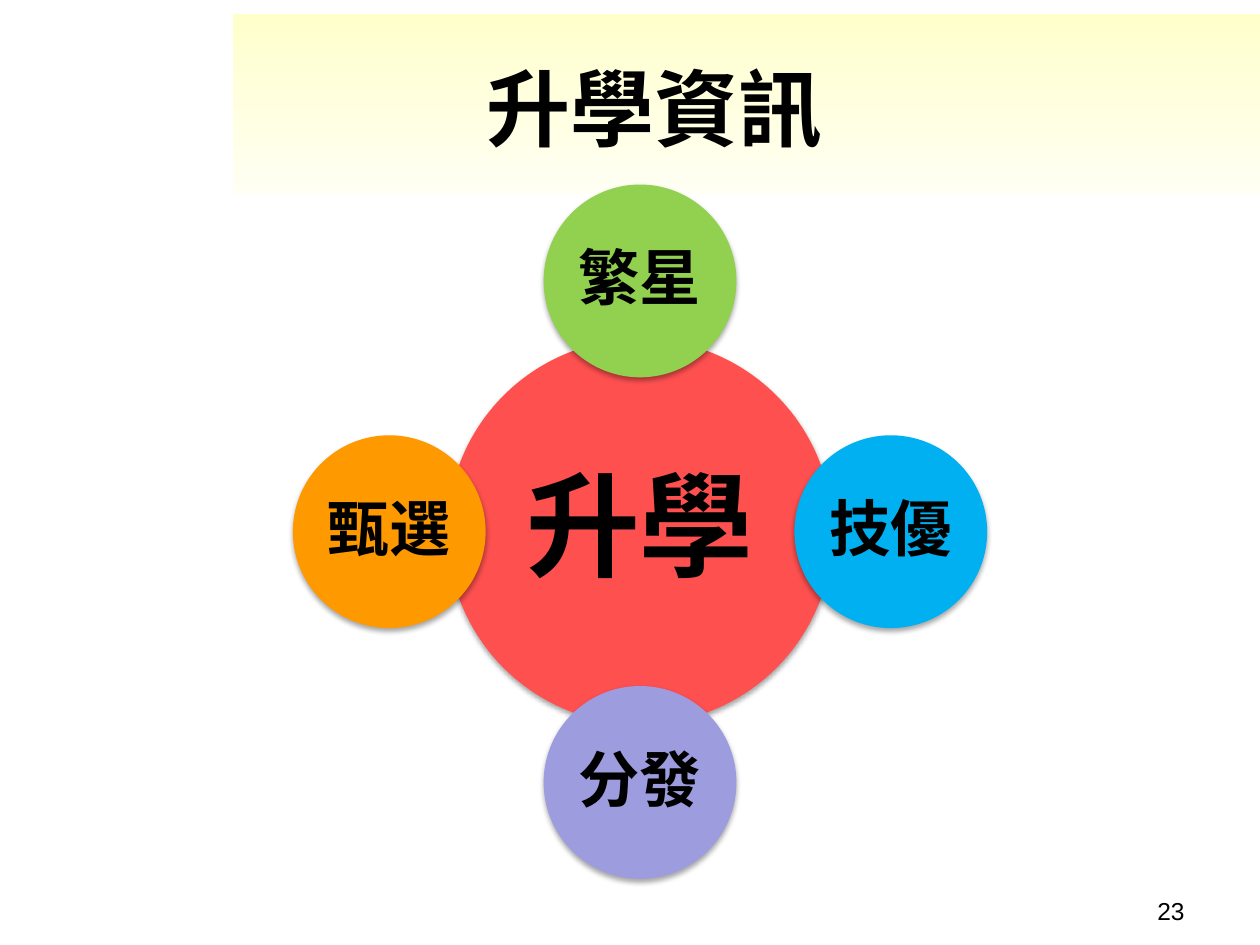
import pptx
import pptx.util
import pptx.dml.color
import pptx.enum.shapes
import pptx.enum.text
import pptx.oxml
import pptx.oxml.ns
from lxml import etree

Inches = pptx.util.Inches
Pt = pptx.util.Pt
Align = pptx.enum.text.PP_ALIGN
Anchor = pptx.enum.text.MSO_ANCHOR
Shape = pptx.enum.shapes.MSO_SHAPE
qn = pptx.oxml.ns.qn


def color(text):
    return pptx.dml.color.RGBColor.from_string(text)


def add(parent, tag, **attrs):
    return etree.SubElement(parent, qn(tag), attrs)


class Deck:
    head = "Noto Sans CJK SC"
    body = "Arial"
    ink = "000000"

    def __init__(self):
        self.file = pptx.Presentation()
        self.file.slide_width = Inches(10)
        self.file.slide_height = Inches(7.5)
        self.slide = self.file.slides.add_slide(self.file.slide_layouts[5])

    def label(self, shape, text, size, font, align, bold=False):
        frame = shape.text_frame
        frame.word_wrap = True
        frame.text = text
        para = frame.paragraphs[0]
        para.alignment = align
        run = para.runs[0]
        run.font.size = Pt(size)
        run.font.bold = bold
        run.font.name = font
        run.font.color.rgb = color(self.ink)
        add(run._r.get_or_add_rPr(), "a:ea", typeface=font)
        return para

    def banner(self, left, top, width, height, start, end):
        box = self.slide.shapes.add_shape(
            Shape.RECTANGLE, Inches(left), Inches(top), Inches(width), Inches(height))
        box.shadow.inherit = False
        box.line.fill.background()
        box.fill.gradient()
        box.fill.gradient_angle = 270
        for stop, shade in zip(box.fill.gradient_stops, (start, end)):
            stop.color.rgb = color(shade)
        title = self.slide.shapes.title
        title._element.addprevious(box._element)

    def title(self, text, left, top, width, height):
        box = self.slide.shapes.title
        box.left, box.top = Inches(left), Inches(top)
        box.width, box.height = Inches(width), Inches(height)
        box.text_frame.vertical_anchor = Anchor.MIDDLE
        self.label(box, text, 48, self.head, Align.CENTER, True)

    def number(self, text, left, top, width, height):
        box = self.slide.shapes.add_textbox(
            Inches(left), Inches(top), Inches(width), Inches(height))
        self.label(box, text, 14, self.body, Align.RIGHT)

    def circle(self, text, x, y, width, fill, size, inset):
        disc = self.slide.shapes.add_shape(
            Shape.OVAL, Inches(x - width / 2), Inches(y - width / 2),
            Inches(width), Inches(width))
        disc.fill.solid()
        disc.fill.fore_color.rgb = color(fill)
        disc.line.fill.background()
        self.shade(disc)
        frame = disc.text_frame
        frame.vertical_anchor = Anchor.MIDDLE
        frame.margin_left = frame.margin_right = Inches(inset)
        frame.margin_top = frame.margin_bottom = Inches(inset)
        para = self.label(disc, text, size, self.head, Align.CENTER, True)
        para.line_spacing = 0.9
        after = add(para._p.get_or_add_pPr(), "a:spcAft")
        add(after, "a:spcPct", val="35000")

    def shade(self, shape):
        shape.shadow.inherit = False
        effects = shape._element.spPr.find(qn("a:effectLst"))
        outer = add(effects, "a:outerShdw", blurRad=str(Pt(3.1)),
                    dist=str(Pt(1.8)), dir="5400000", rotWithShape="0")
        tint = add(outer, "a:srgbClr", val=self.ink)
        add(tint, "a:alpha", val="35000")


def main():
    deck = Deck()
    deck.banner(1.85, 0.11, 8.15, 1.43, "FFFFCC", "FFFFF3")
    deck.title("升學資訊", 1.85, 0.38, 6.69, 0.93)
    deck.number("23", 7.17, 7.06, 2.33, 0.39)

    x, y, reach = 5.08, 4.22, 1.99
    deck.circle("升學", x, y, 3.06, "FF5050", 65, 0.09)
    for text, dx, dy, fill in (
        ("繁星", 0, -1, "92D050"),
        ("技優", 1, 0, "00B0F0"),
        ("分發", 0, 1, "9C9CDF"),
        ("甄選", -1, 0, "FF9900"),
    ):
        deck.circle(text, x + dx * reach, y + dy * reach, 1.53, fill, 35, 0.05)
    deck.file.save("out.pptx")


if __name__ == "__main__":
    main()
